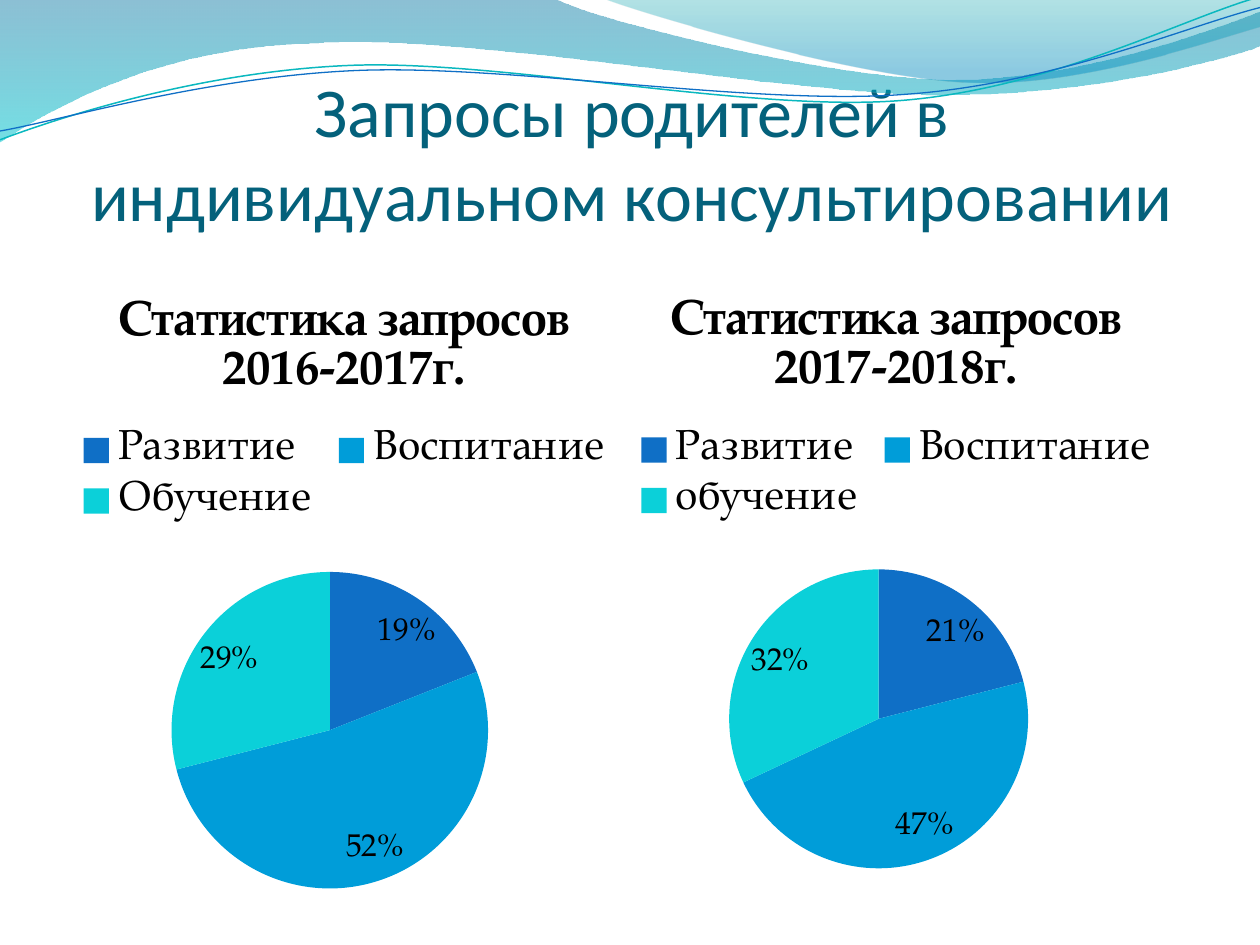
from lxml import etree
from pptx import Presentation
from pptx.chart.data import CategoryChartData
from pptx.dml.color import RGBColor
from pptx.enum.chart import XL_CHART_TYPE, XL_LABEL_POSITION, XL_LEGEND_POSITION
from pptx.enum.text import MSO_ANCHOR, MSO_AUTO_SIZE, PP_ALIGN
from pptx.oxml.ns import qn
from pptx.util import Inches, Pt

PIE = XL_CHART_TYPE.PIE
TOP = XL_LEGEND_POSITION.TOP
BEST = XL_LABEL_POSITION.BEST_FIT
LOW = MSO_ANCHOR.BOTTOM
MID = PP_ALIGN.CENTER
WIDE, HIGH = 10, 7.5
SERIF = "TeX Gyre Pagella"
TINTS = ["0F6FC6", "009DD9", "0BD0D9"]
GRAIN = 100

BANDS = [
    ([(0, 0), (4.4, -0.01),
      [(4.76, 0.17), (6.64, 0.63), (7.58, 0.63)],
      [(8.53, 0.63), (9.58, 0.26), (10, 0.09)], (10.01, 0.36),
      [(9.83, 0.44), (8.7, 0.76), (7.46, 0.75)],
      [(6.22, 0.75), (3.82, 0.28), (2.57, 0.34)],
      [(1.29, 0.36), (0.46, 0.83), (-0.01, 1.13)]],
     [(0, "0074A1", 45), (1, "00C6CF", 55)]),
    ([(4.79, -0.01),
      [(5.09, 0.11), (6.82, 0.62), (7.69, 0.65)],
      [(8.56, 0.69), (9.61, 0.32), (10, 0.21)], (10, 0)],
     [(0, "00A1A9", 30), (0.8, "008BBF", 45)]),
]
WAVES = [
    ([(0, 1.11),
      [(0.48, 0.93), (1.58, 0.57), (2.77, 0.52)],
      [(3.95, 0.47), (5.93, 0.89), (7.13, 0.8)],
      [(8.33, 0.71), (9.38, 0.15), (9.98, -0.02)]], "0AB8BF", 0.85),
    ([(0, 1.04),
      [(0.47, 0.96), (1.64, 0.61), (2.83, 0.56)],
      [(4.03, 0.51), (5.97, 0.84), (7.17, 0.75)],
      [(8.36, 0.67), (9.41, 0.21), (10, 0.06)]], "0F6FC6", 0.75),
]


def hue(code):
    return RGBColor.from_string(code)


def style(font, size, face=SERIF, tint="000000", bold=False):
    font.size = Pt(size)
    font.name = face
    font.bold = bold
    font.color.rgb = hue(tint)


def write(frame, text, align=MID, **form):
    frame.text = text
    para = frame.paragraphs[0]
    para.alignment = align
    style(para.runs[0].font, **form)


def bend(shape, parts):
    lines = iter(list(shape._element.iter(qn("a:lnTo"))))
    for part in parts:
        line = next(lines)
        if isinstance(part, list):
            line.tag = qn("a:cubicBezTo")
            for _ in part[1:]:
                other = next(lines)
                line.append(other[0])
                other.getparent().remove(other)


def draw(slide, route, close):
    dots = []
    for part in route:
        dots += part if isinstance(part, list) else [part]
    dots = [(round(x * GRAIN), round(y * GRAIN)) for x, y in dots]
    pen = slide.shapes.build_freeform(*dots[0], scale=Inches(1) / GRAIN)
    pen.add_line_segments(dots[1:], close=close)
    shape = pen.convert_to_shape()
    bend(shape, route[1:])
    shape.shadow.inherit = False
    return shape


def band(slide, route, stops):
    shape = draw(slide, route, True)
    shape.line.fill.background()
    shape.fill.gradient()
    shape.fill.gradient_angle = 270
    for stop, (spot, tint, _) in zip(shape.fill.gradient_stops, stops):
        stop.position = spot
        stop.color.rgb = hue(tint)
    marks = shape._element.spPr.iter(qn("a:srgbClr"))
    for mark, (_, _, alpha) in zip(marks, stops):
        etree.SubElement(mark, qn("a:alpha"), val=str(alpha * 1000))


def wave(slide, route, tint, width):
    shape = draw(slide, route, False)
    shape.fill.background()
    shape.line.color.rgb = hue(tint)
    shape.line.width = Pt(width)


def place(box):
    return [Inches(part * side / 100)
            for part, side in zip(box, (WIDE, HIGH, WIDE, HIGH))]


def head(slide, box, text):
    title = slide.shapes.title
    title.left, title.top, title.width, title.height = place(box)
    frame = title.text_frame
    frame.word_wrap = True
    frame.auto_size = MSO_AUTO_SIZE.NONE
    frame.vertical_anchor = LOW
    frame.margin_left = frame.margin_right = frame.margin_bottom = 0
    frame.margin_top = Inches(0.05)
    write(frame, text, size=40, face="Calibri", tint="04617B")


def pie(slide, box, text, names, values):
    data = CategoryChartData()
    data.categories = names
    data.add_series("Series 1", values)
    chart = slide.shapes.add_chart(PIE, *place(box), data).chart
    style(chart.font, 18)
    chart.has_title = True
    write(chart.chart_title.text_frame, text, size=28, bold=True)
    chart.chart_title.include_in_layout = False
    chart.has_legend = True
    chart.legend.position = TOP
    chart.legend.include_in_layout = False
    style(chart.legend.font, 24)
    plot = chart.plots[0]
    plot.vary_by_categories = True
    for index, tint in enumerate(TINTS):
        fill = plot.series[0].points[index].format.fill
        fill.solid()
        fill.fore_color.rgb = hue(tint)
    plot.has_data_labels = True
    labels = plot.data_labels
    labels.show_percentage = True
    labels.show_value = False
    labels.number_format = "0%"
    labels.number_format_is_linked = False
    labels.position = BEST
    style(labels.font, 18)


def main():
    deck = Presentation()
    deck.slide_width, deck.slide_height = Inches(WIDE), Inches(HIGH)
    slide = deck.slides.add_slide(deck.slide_layouts[5])
    for item in BANDS:
        band(slide, *item)
    for item in WAVES:
        wave(slide, *item)
    head(slide, (5, 5.2, 90.3, 19.73),
         "Запросы родителей в индивидуальном консультировании")
    pie(slide, (2.3, 28.13, 50, 67.73), "Статистика запросов 2016-2017г.",
        ["Развитие", "Воспитание", "Обучение"], [19, 52, 29])
    pie(slide, (46.1, 28.13, 50, 65.6), "Статистика запросов 2017-2018г.",
        ["Развитие", "Воспитание", "обучение"], [21, 47, 32])
    deck.save("out.pptx")


if __name__ == "__main__":
    main()
